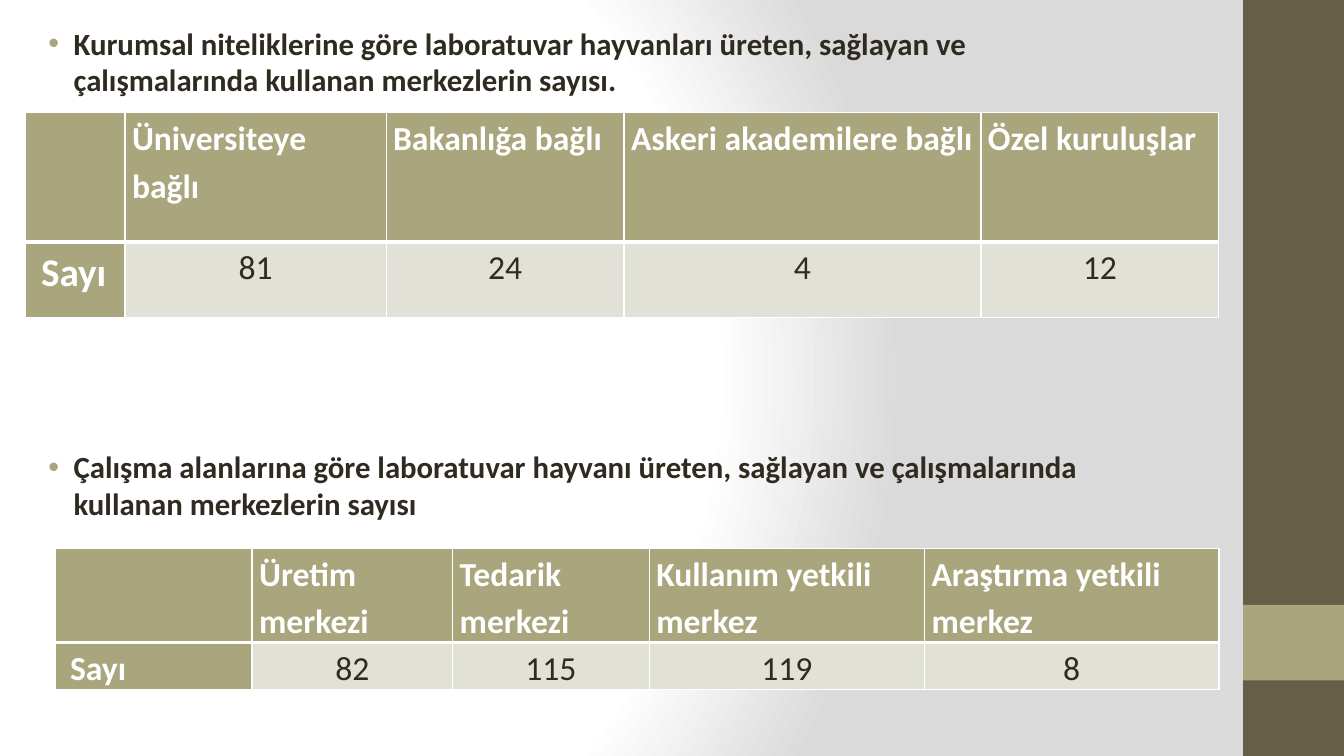
from pptx import Presentation
from pptx.dml.color import RGBColor
from pptx.enum.shapes import MSO_SHAPE
from pptx.enum.text import MSO_AUTO_SIZE, PP_ALIGN
from pptx.oxml import parse_xml
from pptx.oxml.ns import nsdecls
from pptx.util import Inches, Pt

BROWN = RGBColor(0x67, 0x5E, 0x47)
OLIVE = RGBColor(0xA9, 0xA5, 0x7C)
PALE = RGBColor(0xE2, 0xE1, 0xD7)
INK = RGBColor(0x2F, 0x2B, 0x20)
WHITE = RGBColor(0xFF, 0xFF, 0xFF)
GREY = RGBColor(0xDA, 0xDA, 0xDA)
FONT = "Calibri"

HEADINGS = [
    ("Kurumsal niteliklerine göre laboratuvar hayvanları üreten, sağlayan ve "
     "çalışmalarında kullanan merkezlerin sayısı.", 4.4),
    ("Çalışma alanlarına göre laboratuvar hayvanı üreten, sağlayan ve "
     "çalışmalarında kullanan merkezlerin sayısı", 250),
]
INSTITUTIONS = [
    ["", "Üniversiteye bağlı", "Bakanlığa bağlı", "Askeri akademilere bağlı", "Özel kuruluşlar"],
    [" Sayı", "81", "24", "4", "12"],
]
FIELDS = [
    ["", "Üretim merkezi", "Tedarik merkezi", "Kullanım yetkili merkez", "Araştırma yetkili merkez"],
    [" Sayı", "82", "115", "119", "8"],
]


def set_background(slide):
    """Radial gradient, white at the left and grey at the right."""
    stops = "".join(
        f'<a:gs pos="{percent * 1000}"><a:srgbClr val="{color}"/></a:gs>'
        for percent, color in [(0, WHITE), (75, WHITE), (100, GREY)])
    slide.element.cSld.insert(0, parse_xml(
        f'<p:bg {nsdecls("p", "a")}><p:bgPr><a:gradFill rotWithShape="1">'
        f'<a:gsLst>{stops}</a:gsLst><a:path path="circle">'
        '<a:fillToRect l="20000" t="50000" r="100000" b="50000"/></a:path>'
        '</a:gradFill><a:effectLst/></p:bgPr></p:bg>'))


def add_side_band(slide, top, height, color):
    band = slide.shapes.add_shape(
        MSO_SHAPE.RECTANGLE, Inches(12.33), Inches(top), Inches(1), Inches(height))
    band.shadow.inherit = False
    band.fill.solid()
    band.fill.fore_color.rgb = color
    band.line.fill.background()


def add_run(paragraph, text, size, color, bold):
    run = paragraph.add_run()
    run.text = text
    run.font.name = FONT
    run.font.size = Pt(size)
    run.font.bold = bold
    run.font.color.rgb = color


def fill_headings(body):
    body.left, body.top = Inches(0.25), Inches(0.19)
    body.width, body.height = Inches(11.11), Inches(5.25)
    frame = body.text_frame
    frame.word_wrap = True
    frame.auto_size = MSO_AUTO_SIZE.NONE
    for index, (heading, space_before) in enumerate(HEADINGS):
        paragraph = frame.add_paragraph() if index else frame.paragraphs[0]
        paragraph.space_before = Pt(space_before)
        properties = paragraph._p.get_or_add_pPr()
        properties.set("marL", str(Inches(0.38)))
        properties.set("indent", str(Inches(-0.25)))
        for bullet in (f'<a:buClr {nsdecls("a")}><a:srgbClr val="{OLIVE}"/></a:buClr>',
                       f'<a:buFont {nsdecls("a")} typeface="Arial"/>',
                       f'<a:buChar {nsdecls("a")} char="•"/>'):
            properties.append(parse_xml(bullet))
        add_run(paragraph, heading, 22, INK, True)


def style_cell(cell, fill, bottom_width):
    """Borders come before the fill, as the schema wants."""
    properties = cell._tc.get_or_add_tcPr()
    for side, width in [("L", 1), ("R", 1), ("T", 1), ("B", bottom_width)]:
        properties.append(parse_xml(
            f'<a:ln{side} {nsdecls("a")} w="{Pt(width)}"><a:solidFill>'
            f'<a:srgbClr val="{WHITE}"/></a:solidFill></a:ln{side}>'))
    cell.fill.solid()
    cell.fill.fore_color.rgb = fill
    cell.margin_left = cell.margin_right = Inches(0.07)
    cell.margin_top = cell.margin_bottom = 0


def add_count_table(slide, rows, left, top, widths, heights, label_size):
    table = slide.shapes.add_table(
        len(rows), len(widths), Inches(left), Inches(top),
        Inches(sum(widths)), Inches(sum(heights))).table
    for column, width in zip(table.columns, widths):
        column.width = Inches(width)
    for row, height in zip(table.rows, heights):
        row.height = Inches(height)
    for r, texts in enumerate(rows):
        for c, text in enumerate(texts):
            cell = table.cell(r, c)
            is_count = r > 0 and c > 0
            style_cell(cell, PALE if is_count else OLIVE, 1 if r else 3)
            if not text:
                continue
            paragraph = cell.text_frame.paragraphs[0]
            paragraph.line_spacing = 1.15
            paragraph.space_after = Pt(10)
            paragraph.alignment = PP_ALIGN.CENTER if is_count else PP_ALIGN.LEFT
            add_run(paragraph, text, 24 if c else label_size,
                    INK if is_count else WHITE, not is_count)


def main():
    deck = Presentation()
    deck.slide_width, deck.slide_height = Inches(13.33), Inches(7.5)
    slide = deck.slides.add_slide(deck.slide_layouts[1])
    title = slide.shapes.title.element
    title.getparent().remove(title)

    set_background(slide)
    add_side_band(slide, 0, 7.5, BROWN)
    add_side_band(slide, 6, 0.75, OLIVE)
    fill_headings(slide.placeholders[1])
    add_count_table(slide, INSTITUTIONS, 0.25, 1.12,
                    [0.99, 2.59, 2.36, 3.54, 2.36], [1.28, 0.75], 28)
    add_count_table(slide, FIELDS, 0.55, 5.44,
                    [1.95, 1.99, 1.95, 2.73, 2.92], [0.92, 0.46], 24)
    deck.save("out.pptx")


if __name__ == "__main__":
    main()
